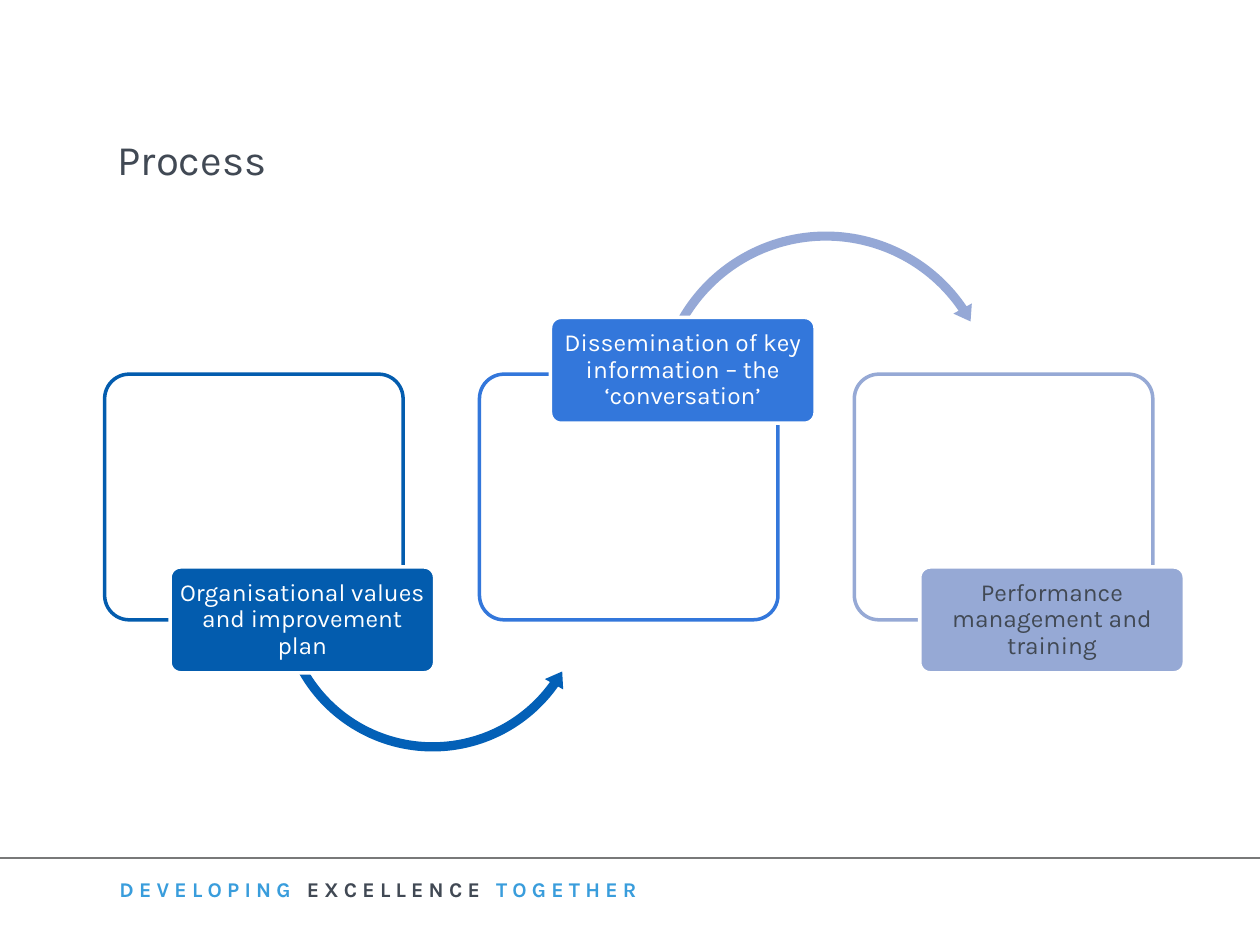
"""Build the three-step process slide with its footer strapline."""
from dataclasses import dataclass
from typing import Optional

from lxml.etree import SubElement
from pptx import Presentation
from pptx.dml.color import RGBColor
from pptx.enum.shapes import MSO_CONNECTOR, MSO_SHAPE
from pptx.enum.text import MSO_ANCHOR as Anchor, PP_ALIGN as Align
from pptx.oxml.ns import qn
from pptx.util import Pt

FONT = "Karla"
COLORS = {
    "white": "FFFFFF",
    "ink": "414954",
    "sky": "399DDC",
    "rule": "787979",
    "navy": "035CAE",
    "navy_arrow": "0360B7",
    "blue": "3377DB",
    "lavender": "96A9D5",
    "lavender_arrow": "95A8D6",
}
FRAME_LEFT, FRAME_TOP, FRAME_PITCH = 59.8, 213.8, 214.2
FRAME_WIDTH, FRAME_HEIGHT = 170.6, 140.4
LABEL_WIDTH, LABEL_HEIGHT = 151.2, 60.5
HIGH_LABEL, LOW_LABEL = 181.4, 324


@dataclass
class Arrow:
    """A curved arrow in a square box."""

    kind: MSO_SHAPE
    left: float
    top: float
    size: float
    color: str
    adjustments: tuple


@dataclass
class Step:
    """A framed step with an overlapping label and an optional arrow."""

    text: str
    color: str
    text_color: str
    label_shift: float
    label_top: float
    arrow: Optional[Arrow] = None


STEPS = [
    Step("Organisational values and improvement plan", "navy", "white", 37.4, LOW_LABEL,
         Arrow(MSO_SHAPE.LEFT_CIRCULAR_ARROW, 156.2, 250.6, 182.2, "navy_arrow",
               (0.029, 3.497, 21.252, 90.245, 0.033))),
    Step("Dissemination of key information – the ‘conversation’", "blue", "white", 40.6,
         HIGH_LABEL,
         Arrow(MSO_SHAPE.CIRCULAR_ARROW, 371.5, 128.9, 200.9, "lavender_arrow",
               (0.026, 3.157, 195.501, 126.168, 0.03))),
    Step("Performance management and training", "lavender", "ink", 37.4, LOW_LABEL),
]
STRAPLINE = [("DEVELOPING", "sky"), (" EXCELLENCE ", "ink"), ("TOGETHER", "sky")]


def rgb(name: str) -> RGBColor:
    """Return a palette colour."""
    return RGBColor.from_string(COLORS[name])


def style_font(font, size: float, color: Optional[str] = None) -> None:
    """Apply the typeface, size and colour."""
    font.name, font.size = FONT, Pt(size)
    if color:
        font.color.rgb = rgb(color)


def add_shape(slide, kind, left: float, top: float, width: float, height: float,
              fill: str, line: Optional[str] = None):
    """Add a flat preset shape, outlined only when a line colour is given."""
    shape = slide.shapes.add_shape(kind, Pt(left), Pt(top), Pt(width), Pt(height))
    shape.shadow.inherit = False
    shape.fill.solid()
    shape.fill.fore_color.rgb = rgb(fill)
    if line:
        shape.line.color.rgb = rgb(line)
        shape.line.width = Pt(2)
    else:
        shape.line.fill.background()
    return shape


def add_box(slide, left: float, top: float, width: float, height: float,
            fill: str, line: str):
    """Add a rounded box with an outline."""
    box = add_shape(slide, MSO_SHAPE.ROUNDED_RECTANGLE, left, top, width, height, fill, line)
    box.adjustments[0] = 0.1
    return box


def add_arrow(slide, arrow: Arrow) -> None:
    """Add a curved arrow."""
    shape = add_shape(slide, arrow.kind, arrow.left, arrow.top, arrow.size, arrow.size,
                      arrow.color)
    for index, value in enumerate(arrow.adjustments):
        shape.adjustments[index] = value


def add_step(slide, step: Step, left: float) -> None:
    """Add a step's frame, arrow and label."""
    frame = add_box(slide, left, FRAME_TOP, FRAME_WIDTH, FRAME_HEIGHT, "white", step.color)
    fill_color = frame._element.spPr.find(qn("a:solidFill")).find(qn("a:srgbClr"))
    SubElement(fill_color, qn("a:alpha")).set("val", "90000")
    if step.arrow:
        add_arrow(slide, step.arrow)
    label = add_box(slide, left + step.label_shift, step.label_top,
                    LABEL_WIDTH, LABEL_HEIGHT, step.color, "white")
    text = label.text_frame
    text.word_wrap = True
    text.vertical_anchor = Anchor.MIDDLE
    text.margin_left = text.margin_right = Pt(2)
    text.margin_top = text.margin_bottom = Pt(1.5)
    para = text.paragraphs[0]
    para.text = step.text
    para.alignment = Align.CENTER
    para.line_spacing = 0.9
    style_font(para.font, 14, step.text_color)


def set_title(slide, words: str) -> None:
    """Place and format the slide title."""
    title = slide.shapes.title
    title.left, title.top, title.width, title.height = Pt(60), Pt(67.7), Pt(487.4), Pt(45.4)
    title.text_frame.vertical_anchor = Anchor.MIDDLE
    para = title.text_frame.paragraphs[0]
    para.text = words
    para.alignment = Align.LEFT
    style_font(para.font, 24, "ink")


def add_footer(slide, slide_width: int) -> None:
    """Add the footer rule and the letter-spaced strapline."""
    rule = slide.shapes.add_connector(MSO_CONNECTOR.STRAIGHT, 0, Pt(490.3),
                                      slide_width, Pt(490.3))
    rule.line.color.rgb = rgb("rule")
    rule.line.width = Pt(0.75)
    SubElement(rule._element.spPr, qn("a:effectLst"))
    box = slide.shapes.add_textbox(Pt(61.2), Pt(497.5), Pt(391.7), Pt(31.7))
    box.text_frame.word_wrap = False
    para = box.text_frame.paragraphs[0]
    style_font(para.font, 12)
    para.font.bold = True
    for words, color in STRAPLINE:
        span = para.add_run()
        span.text = words
        span.font.color.rgb = rgb(color)
        span._r.get_or_add_rPr().set("spc", "300")


def main() -> None:
    """Build and save the deck."""
    deck = Presentation()
    deck.slide_width, deck.slide_height = Pt(720), Pt(540)
    slide = deck.slides.add_slide(deck.slide_layouts[5])
    add_footer(slide, deck.slide_width)
    set_title(slide, "Process")
    for index, step in enumerate(STEPS):
        add_step(slide, step, FRAME_LEFT + index * FRAME_PITCH)
    deck.save("out.pptx")


if __name__ == "__main__":
    main()
